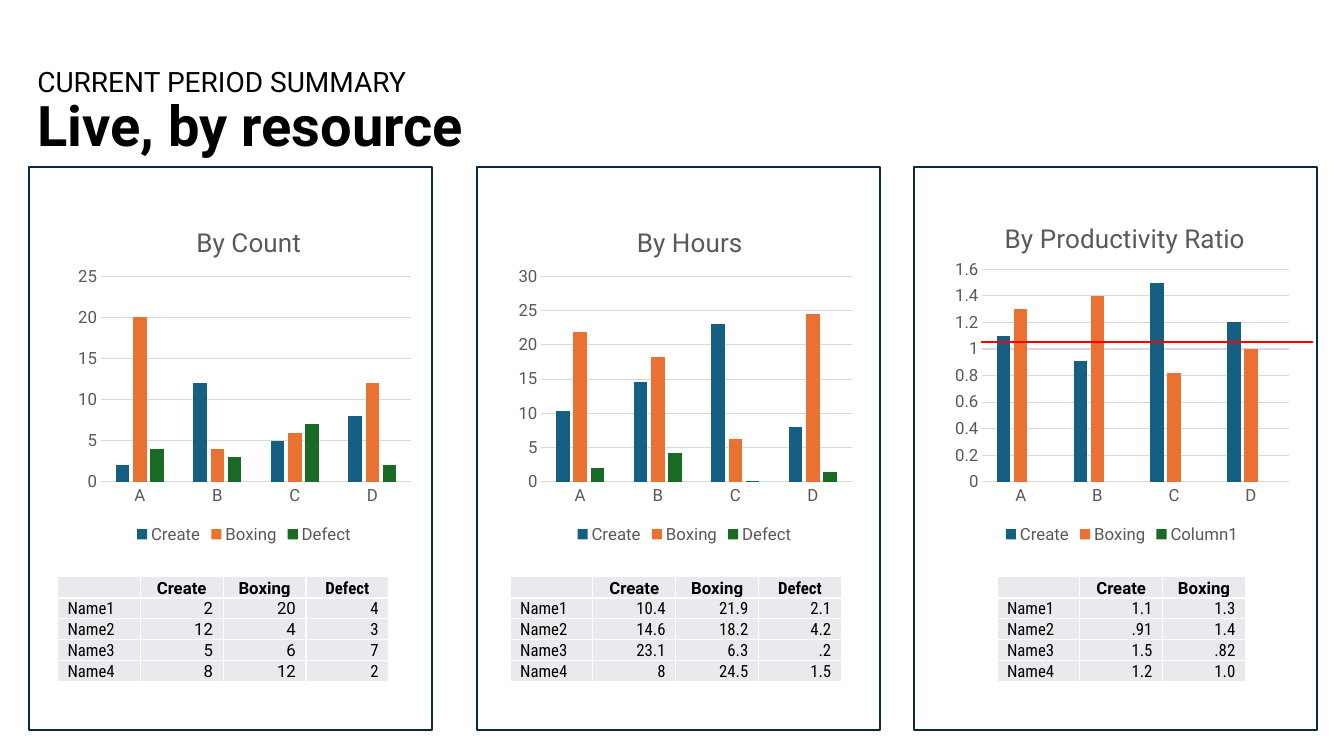
from dataclasses import dataclass

from lxml import etree
from pptx import Presentation
from pptx import util as u
from pptx.chart.data import CategoryChartData
from pptx.dml.color import RGBColor
from pptx.enum import chart as charts, shapes, text
from pptx.oxml.ns import qn

GRID = u.Inches(0.1)
COLS, ROWS = 133.33, 75


@dataclass(frozen=True)
class Theme:
    font: str = "Roboto"
    narrow: str = "Roboto Condensed"
    ink: str = "000000"
    muted: str = "595959"
    rule: str = "D9D9D9"
    frame: str = "092A39"
    target: str = "FF0000"
    cell: str = "E8EAED"
    border: str = "FFFFFF"
    series: tuple = ("156082", "E97132", "196B24")
    kicker: float = 20
    title: float = 40
    heading: float = 18.6
    label: float = 12


THEME = Theme()

PANELS = [
    {
        "left": 2.9, "chart_dx": 4, "table_dx": 2.8,
        "title": "By Count", "title_at": (0.35, 0.06),
        "plot_at": (0.09, 0.22, 0.89, 0.59), "scale": (25, 5),
        "names": ["Create", "Boxing", "Defect"],
        "values": [[2, 12, 5, 8], [20, 4, 6, 12], [4, 3, 7, 2]],
        "table": [["2", "20", "4"], ["12", "4", "3"], ["5", "6", "7"], ["8", "12", "2"]],
        "fonts": [THEME.font, THEME.font, THEME.narrow],
    },
    {
        "left": 47.3, "chart_dx": 3.3, "table_dx": 3.3,
        "title": "By Hours", "title_at": (0.35, 0.06),
        "plot_at": (0.09, 0.22, 0.89, 0.59), "scale": (30, 5),
        "names": ["Create", "Boxing", "Defect"],
        "values": [[10.4, 14.6, 23.1, 8], [21.9, 18.2, 6.3, 24.5], [2.1, 4.2, 0.2, 1.5]],
        "table": [["10.4", "21.9", "2.1"], ["14.6", "18.2", "4.2"],
                  ["23.1", "6.3", ".2"], ["8", "24.5", "1.5"]],
        "fonts": [THEME.narrow] * 3,
    },
    {
        "left": 90.7, "chart_dx": 3.3, "table_dx": 8.2,
        "title": "By Productivity Ratio", "title_at": (0.15, 0.05),
        "plot_at": (0.1, 0.2, 0.88, 0.61), "scale": (1.6, 0.2),
        "names": ["Create", "Boxing", "Column1"],
        "values": [[1.1, 0.91, 1.5, 1.2], [1.3, 1.4, 0.82, 1], [None] * 4],
        "table": [["1.1", "1.3"], [".91", "1.4"], ["1.5", ".82"], ["1.2", "1.0"]],
        "fonts": [THEME.narrow] * 2, "target_dy": 17.3,
    },
]


def grid(*lengths):
    return [int(GRID * n) for n in lengths]


def apply(obj, values):
    for name, value in values.items():
        setattr(obj, name, value)


def set_font(font, size, color, name=THEME.font, bold=False):
    apply(font, {"size": u.Pt(size), "name": name, "bold": bold})
    font.color.rgb = RGBColor.from_string(color)


def set_line(line, color, width):
    line.color.rgb = RGBColor.from_string(color)
    line.width = u.Pt(width)


def set_layout(parent, **shares):
    layout = parent.find(qn("c:layout"))
    if layout is None:
        layout = etree.Element(qn("c:layout"))
        parent.insert(0, layout)
    manual = etree.SubElement(layout, qn("c:manualLayout"))
    if "w" in shares:
        etree.SubElement(manual, qn("c:layoutTarget"), val="inner")
    for axis in "xy":
        etree.SubElement(manual, qn(f"c:{axis}Mode"), val="edge")
    for name, share in shares.items():
        etree.SubElement(manual, qn(f"c:{name}"), val=str(share))


def add_title(s, box):
    sp = s.shapes.title
    apply(sp, dict(zip(("left", "top", "width", "height"), grid(*box))))
    tf = sp.text_frame
    apply(tf, {"vertical_anchor": text.MSO_ANCHOR.MIDDLE, "word_wrap": True,
               "auto_size": text.MSO_AUTO_SIZE.NONE})
    p = tf.paragraphs[0]
    apply(p, {"alignment": text.PP_ALIGN.LEFT, "line_spacing": 0.9})
    r = p.add_run()
    r.text = "CURRENT PERIOD SUMMARY"
    set_font(r.font, THEME.kicker, THEME.ink)
    p.add_line_break()
    etree.SubElement(p._p.find(qn("a:br")), qn("a:rPr"), sz=str(THEME.kicker * 100))
    r = p.add_run()
    r.text = "Live, by resource"
    set_font(r.font, THEME.title, THEME.ink, bold=True)


def add_columns(s, box, panel):
    data = CategoryChartData()
    data.categories = list("ABCD")
    for name, values in zip(panel["names"], panel["values"]):
        data.add_series(name, values)
    kind = charts.XL_CHART_TYPE.COLUMN_CLUSTERED
    ch = s.shapes.add_chart(kind, *grid(*box), data).chart
    set_font(ch.font, 10, THEME.ink)
    apply(ch, {"has_title": True, "has_legend": True})
    r = ch.chart_title.text_frame.paragraphs[0].add_run()
    r.text = panel["title"]
    set_font(r.font, THEME.heading, THEME.muted)
    set_layout(ch.chart_title._element, **dict(zip("xy", panel["title_at"])))
    apply(ch.legend, {"position": charts.XL_LEGEND_POSITION.BOTTOM, "include_in_layout": False})
    set_font(ch.legend.font, THEME.label, THEME.muted)
    for axis in (ch.category_axis, ch.value_axis):
        apply(axis, {"major_tick_mark": charts.XL_TICK_MARK.NONE,
                     "minor_tick_mark": charts.XL_TICK_MARK.NONE})
        set_font(axis.tick_labels.font, THEME.label, THEME.muted)
    set_line(ch.category_axis.format.line, THEME.rule, 0.75)
    top, step = panel["scale"]
    apply(ch.value_axis, {"minimum_scale": 0, "maximum_scale": top, "major_unit": step,
                          "has_major_gridlines": True})
    ch.value_axis.format.line.fill.background()
    set_line(ch.value_axis.major_gridlines.format.line, THEME.rule, 0.75)
    plot = ch.plots[0]
    apply(plot, {"gap_width": 219, "overlap": -27, "vary_by_categories": False})
    for series, color in zip(plot.series, THEME.series):
        series.format.fill.solid()
        series.format.fill.fore_color.rgb = RGBColor.from_string(color)
    set_layout(ch._chartSpace.chart.plotArea, **dict(zip("xywh", panel["plot_at"])))


def fill_cell(cell, value, align, font, bold):
    apply(cell, {"margin_left": u.Inches(0.1), "margin_right": u.Inches(0.1),
                 "margin_top": u.Inches(0.01), "margin_bottom": 0,
                 "vertical_anchor": text.MSO_ANCHOR.BOTTOM})
    p = cell.text_frame.paragraphs[0]
    if value:
        p.alignment = align
        r = p.add_run()
        r.text = value
        set_font(r.font, THEME.label, THEME.ink, font, bold)
    else:
        etree.SubElement(p._p, qn("a:endParaRPr"), sz=str(THEME.label * 100))
    tc = cell._tc.get_or_add_tcPr()
    for side in "LRTB":
        ln = etree.SubElement(tc, qn(f"a:ln{side}"), w=str(u.Pt(1)))
        solid = etree.SubElement(ln, qn("a:solidFill"))
        etree.SubElement(solid, qn("a:srgbClr"), val=THEME.border)
    cell.fill.solid()
    cell.fill.fore_color.rgb = RGBColor.from_string(THEME.cell)


def add_figures(s, left, top, panel):
    fonts = panel["fonts"]
    n = len(fonts)
    head_fonts = [THEME.font, THEME.font, THEME.narrow][:n]
    rows = [["", *panel["names"][:n]]]
    rows += [[f"Name{i}", *row] for i, row in enumerate(panel["table"], 1)]
    box = grid(left, top, 8.22 * (n + 1), 10.3)
    table = s.shapes.add_table(len(rows), n + 1, *box).table
    apply(table, {"first_row": False, "horz_banding": False})
    for i, row in enumerate(rows):
        for j, value in enumerate(row):
            align = text.PP_ALIGN.RIGHT if j else text.PP_ALIGN.LEFT
            if i == 0:
                align = text.PP_ALIGN.CENTER
            font = [THEME.narrow, *(fonts if i else head_fonts)][j]
            fill_cell(table.cell(i, j), value, align, font, i == 0)


def add_panel(s, box, panel):
    left, top, width, height = box
    sp = s.shapes.add_shape(shapes.MSO_SHAPE.RECTANGLE, *grid(*box))
    sp.shadow.inherit = False
    sp.fill.background()
    set_line(sp.line, THEME.frame, 1.5)
    add_columns(s, (left + panel["chart_dx"], top + 3.2, 34.6, 34.6), panel)
    add_figures(s, left + panel["table_dx"], top + 40.6, panel)
    if "target_dy" in panel:
        x, y = left + 6.6, top + panel["target_dy"]
        line = s.shapes.add_connector(shapes.MSO_CONNECTOR.STRAIGHT, *grid(x, y, x + 33, y))
        set_line(line.line, THEME.target, 1.5)
        etree.SubElement(line._element.spPr, qn("a:effectLst"))


def main():
    prs = Presentation()
    prs.slide_width, prs.slide_height = grid(COLS, ROWS)
    s = prs.slides.add_slide(prs.slide_layouts[5])
    add_title(s, (2.7, 4, 121.5, 14.5))
    for panel in PANELS:
        add_panel(s, (panel["left"], 16.6, 40, 55.8), panel)
    prs.save("out.pptx")


if __name__ == "__main__":
    main()
